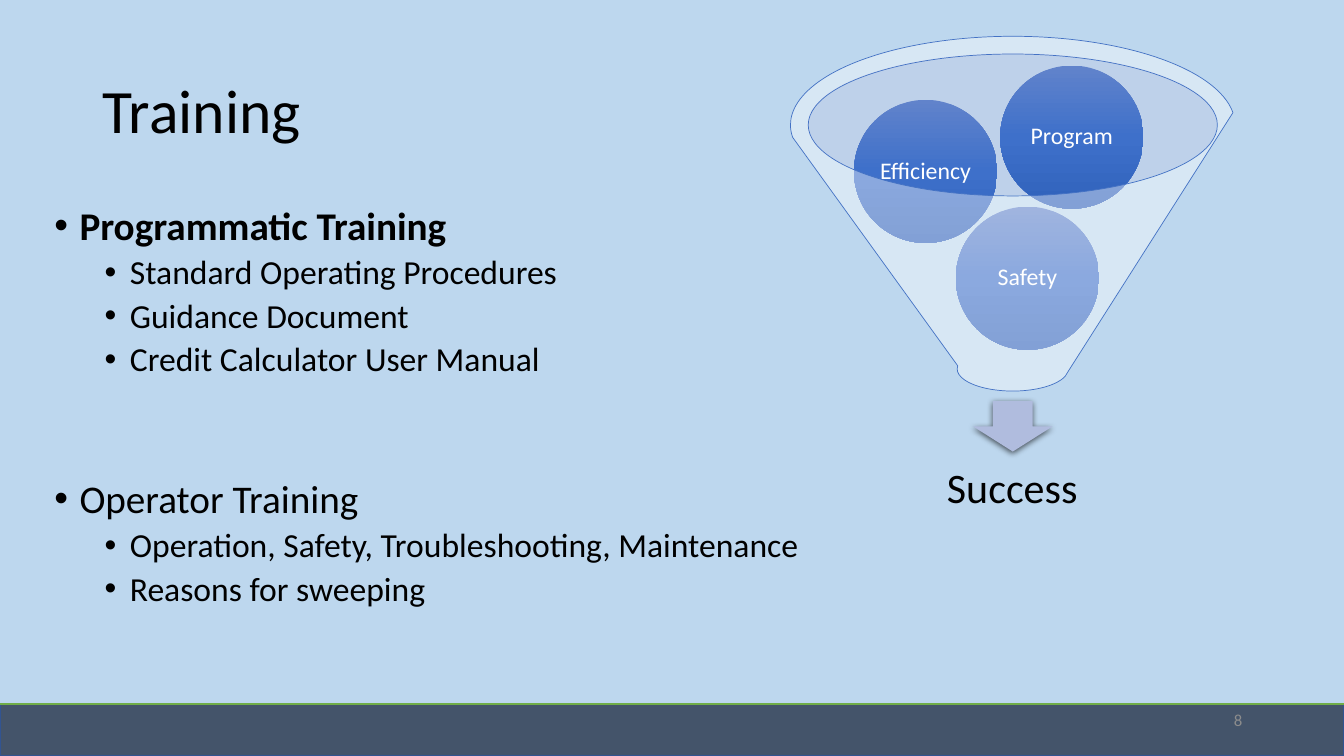
"""Build the Training slide with its bullet list and success funnel."""
from copy import deepcopy
from lxml.etree import SubElement as Sub
from pptx import Presentation
from pptx.dml.color import RGBColor
from pptx.enum.shapes import MSO_CONNECTOR as Link, MSO_SHAPE as Kind
from pptx.enum.text import MSO_ANCHOR as Anchor, PP_ALIGN as Align
from pptx.oxml.ns import qn
from pptx.util import Inches, Pt

rgb = RGBColor.from_string

deck = Presentation()
deck.slide_width, deck.slide_height = Inches(13.33), Inches(7.5)
slide = deck.slides.add_slide(deck.slide_layouts[6])
slide.background.fill.solid()
slide.background.fill.fore_color.rgb = rgb("BDD7EE")


def draw(kind, box, fill, line=None, width=1, alpha=None):
    shape = slide.shapes.add_shape(kind, *map(Inches, box))
    shape.shadow.inherit = False
    shape.fill.solid()
    shape.fill.fore_color.rgb = rgb(fill)
    if alpha:
        tint = shape._element.spPr.find(qn("a:solidFill"))[0]
        Sub(tint, qn("a:alpha"), val=str(alpha * 1000))
    if line:
        shape.line.color.rgb = rgb(line)
        shape.line.width = Pt(width)
    else:
        shape.line.fill.background()
    return shape


def write(shape, text, size, hue, align, inset=None):
    frame = shape.text_frame
    frame.word_wrap = True
    frame.vertical_anchor = Anchor.MIDDLE
    if inset is not None:
        frame.margin_left = frame.margin_right = Inches(inset)
        frame.margin_top = frame.margin_bottom = Inches(inset)
    para = frame.paragraphs[0]
    para.alignment = align
    para.line_spacing = 0.9
    run = para.add_run()
    run.text = text
    run.font.name, run.font.size = "Calibri", Pt(size)
    run.font.color.rgb = rgb(hue)


draw(Kind.RECTANGLE, (0, 6.99, 13.33, 0.51), "44546A", "325491")
rule = slide.shapes.add_connector(Link.STRAIGHT, 0, Inches(6.98), Inches(13.33), Inches(6.98))
rule.line.color.rgb = rgb("70AD47")
rule.line.width = Pt(1.5)
Sub(rule._element.spPr, qn("a:effectLst"))

labels = [
    ("Training", (0.92, 0.4, 11.5, 1.45), 44, "000000", Align.LEFT, None),
    ("8", (9.42, 6.95, 3, 0.4), 12, "8C8C8C", Align.RIGHT, None),
    ("Success", (8.15, 4.39, 3.78, 0.94), 30, "000000", Align.CENTER, 0.23),
]
for text, box, size, hue, align, inset in labels:
    write(slide.shapes.add_textbox(*map(Inches, box)), text, size, hue, align, inset)

items = [
    (0, "Programmatic Training", 0),
    (1, "Standard Operating Procedures", 5),
    (1, "Guidance Document", 5),
    (1, "Credit Calculator User Manual", 5),
    (0, "Operator Training", 72),
    (1, "Operation, Safety, Troubleshooting, Maintenance", 5),
    (1, "Reasons for sweeping", 5),
]
body = slide.shapes.add_textbox(*map(Inches, (0.44, 2, 11.98, 4.76))).text_frame
body.word_wrap = True
for row, (level, text, gap) in enumerate(items):
    para = body.add_paragraph() if row else body.paragraphs[0]
    para.level = level
    para.line_spacing = 0.9
    para.space_before = Pt(gap)
    props = para._p.get_or_add_pPr()
    props.set("marL", str(Inches(0.25 + 0.5 * level)))
    props.set("indent", str(Inches(-0.25)))
    Sub(props, qn("a:buFont"), typeface="Arial")
    Sub(props, qn("a:buChar"), char="•")
    run = para.add_run()
    run.text = text
    run.font.name, run.font.size = "Calibri", Pt(28 - 4 * level)
    run.font.bold = row == 0
    run.font.color.rgb = rgb("000000")

draw(Kind.OVAL, (8.01, 0.53, 4.06, 1.41), "C1C9E4", alpha=40)
arrow = draw(Kind.DOWN_ARROW, (9.65, 3.98, 0.79, 0.5), "B0BCDE")
glow = Sub(arrow._element.spPr.find(qn("a:effectLst")), qn("a:outerShdw"),
           blurRad=str(Pt(4.5)), dist=str(Pt(1.5)), dir="5400000", rotWithShape="0")
Sub(Sub(glow, qn("a:srgbClr"), val="000000"), qn("a:alpha"), val="63000")

shades = [(0, "6183CB"), (0.5, "3E70CA"), (1, "3062BB")]
for text, left, top in [("Safety", 9.48, 2.05), ("Efficiency", 8.47, 0.99), ("Program", 9.92, 0.65)]:
    ball = draw(Kind.OVAL, (left, top, 1.42, 1.42), "3E70CA")
    ball.fill.gradient()
    ball.fill.gradient_angle = 270
    stops = ball._element.spPr.find(qn("a:gradFill")).find(qn("a:gsLst"))
    stops.append(deepcopy(stops[0]))
    for stop, (place, hue) in zip(ball.fill.gradient_stops, shades):
        stop.position = place
        stop.color.rgb = rgb(hue)
    write(ball, text, 17, "FFFFFF", Align.CENTER, 0.02)

draw(Kind.FUNNEL, (7.84, 0.36, 4.41, 3.52), "FFFFFF", "4472C4", 0.5, 40)

deck.save("out.pptx")
